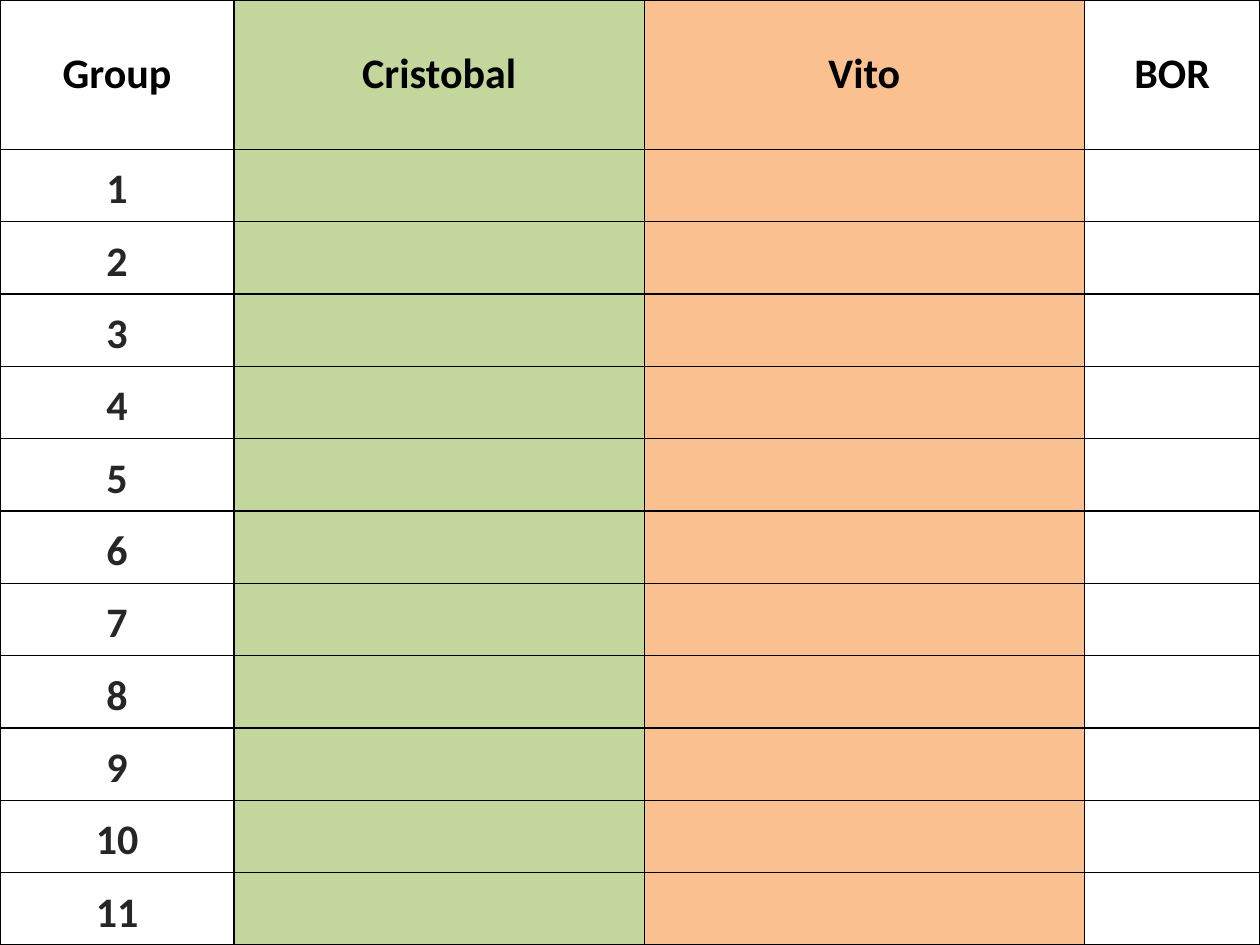
import pptx
import pptx.util
import pptx.dml.color
import pptx.enum.text
import pptx.oxml

Cm = pptx.util.Cm
Pt = pptx.util.Pt
RGBColor = pptx.dml.color.RGBColor
Anchor = pptx.enum.text.MSO_ANCHOR

colours = {
    "border": "000000",
    "header": "000000",
    "number": "262626",
    "green": "C3D69B",
    "orange": "FAC090",
}
columns = [
    ("Group", 4.72, None),
    ("Cristobal", 8.27, "green"),
    ("Vito", 8.87, "orange"),
    ("BOR", 3.54, None),
]
group_count = 11
page_width, page_height, header_height = 25.4, 19.05, 3.01
group_height = (page_height - header_height) / group_count


def add_borders(cell):
    properties = cell._tc.get_or_add_tcPr()
    for side in ("lnL", "lnR", "lnT", "lnB"):
        properties.append(pptx.oxml.parse_xml(
            f'<a:{side} xmlns:a="http://schemas.openxmlformats.org/drawingml/2006/main" w="{Pt(1)}">'
            f'<a:solidFill><a:srgbClr val="{colours["border"]}"/></a:solidFill></a:{side}>'
        ))


deck = pptx.Presentation()
deck.slide_width = Cm(page_width)
deck.slide_height = Cm(page_height)
page = deck.slides.add_slide(deck.slide_layouts[6])

table = page.shapes.add_table(
    group_count + 1, len(columns), 0, 0, Cm(page_width), Cm(page_height)
).table
table.horz_banding = False
table.first_row = False

for column, (heading, width, fill) in enumerate(columns):
    table.columns[column].width = Cm(width)
    for row in range(group_count + 1):
        is_header = row == 0
        table.rows[row].height = Cm(header_height if is_header else group_height)
        cell = table.cell(row, column)
        add_borders(cell)
        if fill:
            cell.fill.solid()
            cell.fill.fore_color.rgb = RGBColor.from_string(colours[fill])
        else:
            cell.fill.background()
        if is_header or column == 0:
            cell.text = heading if is_header else str(row)
            cell.vertical_anchor = Anchor.MIDDLE if is_header else Anchor.BOTTOM
            para = cell.text_frame.paragraphs[0]
            para.alignment = pptx.enum.text.PP_ALIGN.CENTER
            para.font.name = "Calibri"
            para.font.size = Pt(24)
            para.font.bold = True
            para.font.color.rgb = RGBColor.from_string(
                colours["header" if is_header else "number"]
            )

deck.save("out.pptx")
